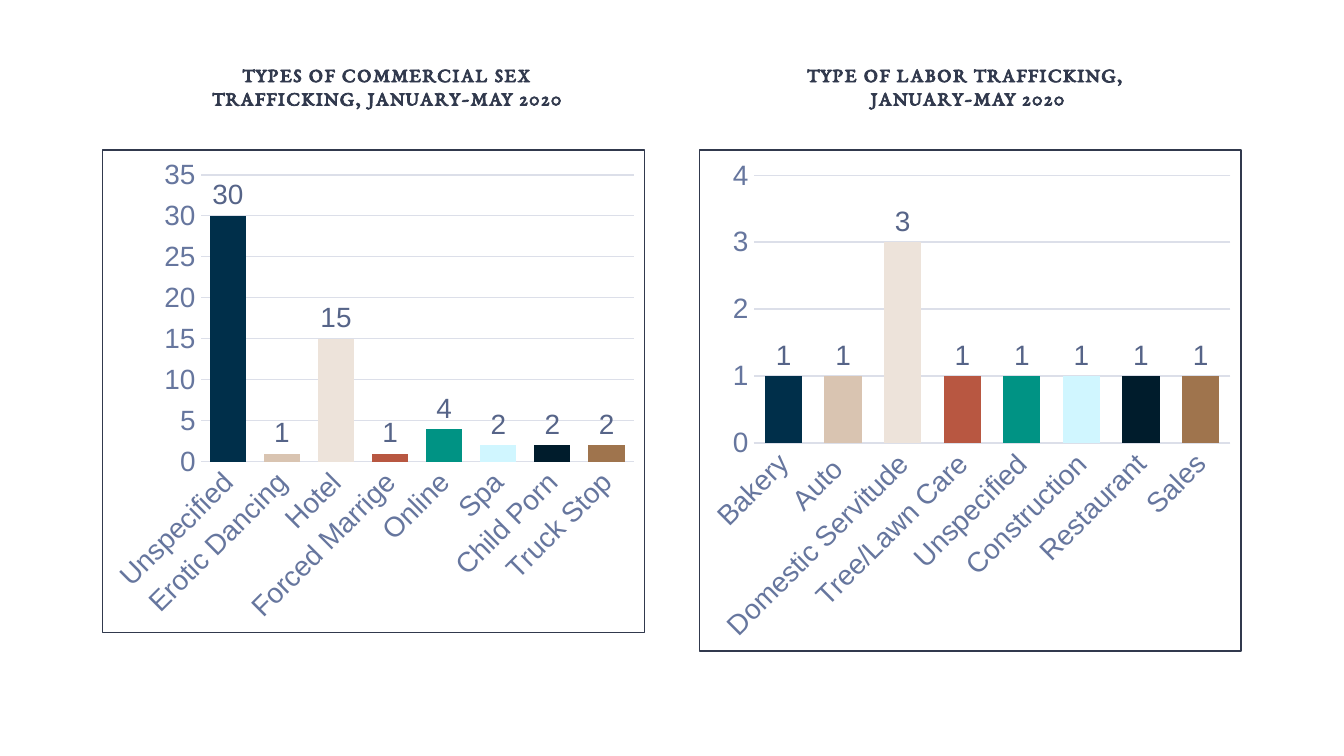
import pptx
import pptx.chart.data
import pptx.dml.color
import pptx.enum.chart
import pptx.enum.text
import pptx.oxml
import pptx.oxml.ns
import pptx.util
from dataclasses import dataclass

Inches = pptx.util.Inches
Pt = pptx.util.Pt
RGB = pptx.dml.color.RGBColor.from_string


@dataclass(frozen=True)
class Theme:
    ink: str = "31394D"
    axis: str = "66769E"
    label: str = "566488"
    grid: str = "DCDFE9"
    bars: tuple = ("002F4A", "D9C4B1", "EDE3DA", "B85741",
                   "009384", "D0F6FF", "001C2C", "9F744D")
    title_font: str = "EB Garamond"
    chart_font: str = "Arial"
    title_size: float = 11
    base_size: float = 10
    chart_size: float = 15
    line: float = 0.75


class Builder:
    def __init__(self, page, theme):
        self.page = page
        self.theme = theme

    def style_font(self, font, name, size, color):
        font.name = name
        font.size = Pt(size)
        font.color.rgb = RGB(color)

    def title(self, lines, left, top, width, height):
        theme = self.theme
        box = self.page.shapes.add_textbox(
            Inches(left), Inches(top), Inches(width), Inches(height))
        frame = box.text_frame
        frame.word_wrap = True
        frame.vertical_anchor = pptx.enum.text.MSO_ANCHOR.BOTTOM
        frame.margin_left = frame.margin_right = Inches(0.1)
        frame.margin_top = frame.margin_bottom = Inches(0.1)
        frame.text = "\n".join(lines)
        for para in frame.paragraphs:
            para.alignment = pptx.enum.text.PP_ALIGN.CENTER
            para.line_spacing = 0.95
            self.style_font(para.font, theme.title_font, theme.title_size, theme.ink)
            para.font.bold = True
            # Letter spacing of 0.75 pt
            para._p.xpath("./a:pPr/a:defRPr")[0].set("spc", "75")

    def column_chart(self, values, left, top, width, height, gap, top_value, step):
        theme = self.theme
        data = pptx.chart.data.CategoryChartData()
        data.categories = list(values)
        data.add_series("Series 1", list(values.values()))
        chart = self.page.shapes.add_chart(
            pptx.enum.chart.XL_CHART_TYPE.COLUMN_CLUSTERED,
            Inches(left), Inches(top), Inches(width), Inches(height), data).chart
        chart.has_title = False
        chart.has_legend = False
        self.style_font(chart.font, theme.chart_font, theme.base_size, theme.ink)
        self.chart_border(chart)

        # Axes
        for axis in (chart.category_axis, chart.value_axis):
            axis.major_tick_mark = pptx.enum.chart.XL_TICK_MARK.NONE
            axis.minor_tick_mark = pptx.enum.chart.XL_TICK_MARK.NONE
            self.style_font(axis.tick_labels.font, theme.chart_font,
                            theme.chart_size, theme.axis)
        chart.element.xpath(".//c:catAx/c:txPr/a:bodyPr")[0].set("rot", "-2700000")
        chart.value_axis.minimum_scale = 0
        chart.value_axis.maximum_scale = top_value
        chart.value_axis.major_unit = step
        chart.value_axis.format.line.fill.background()
        for line in (chart.category_axis.format.line,
                     chart.value_axis.major_gridlines.format.line):
            line.color.rgb = RGB(theme.grid)
            line.width = Pt(theme.line)

        # Columns and their labels
        plot = chart.plots[0]
        plot.gap_width = gap
        plot.overlap = -27
        plot.vary_by_categories = False
        series = plot.series[0]
        for index, color in enumerate(theme.bars):
            fill = series.points[index].format.fill
            fill.solid()
            fill.fore_color.rgb = RGB(color)
        labels = series.data_labels
        labels.show_value = True
        labels.position = pptx.enum.chart.XL_LABEL_POSITION.OUTSIDE_END
        self.style_font(labels.font, theme.chart_font, theme.chart_size, theme.label)

    def chart_border(self, chart):
        theme = self.theme
        border = pptx.oxml.parse_xml(
            f'<c:spPr {pptx.oxml.ns.nsdecls("c", "a")}><a:noFill/>'
            f'<a:ln w="{Pt(theme.line)}"><a:solidFill><a:srgbClr val="{theme.ink}"/>'
            '</a:solidFill></a:ln></c:spPr>')
        chart.element.find(pptx.oxml.ns.qn("c:chart")).addnext(border)


def main():
    # Widescreen page, 16:9
    deck = pptx.Presentation()
    deck.slide_width = Inches(10)
    deck.slide_height = Inches(10 * 9 / 16)
    page = deck.slides.add_slide(deck.slide_layouts[6])
    builder = Builder(page, Theme())

    # Left: commercial sex trafficking
    builder.title(["TYPES OF COMMERCIAL SEX TRAFFICKING, JANUARY-MAY 2020"],
                  1.13, 0.34, 3.5, 0.58)
    sex_trafficking = {
        "Unspecified": 30, "Erotic Dancing": 1, "Hotel": 15, "Forced Marrige": 1,
        "Online": 4, "Spa": 2, "Child Porn": 2, "Truck Stop": 2}
    builder.column_chart(sex_trafficking, 0.76, 1.11, 4.04, 3.6,
                         gap=50, top_value=35, step=5)

    # Right: labor trafficking
    builder.title(["TYPE OF LABOR TRAFFICKING, ", "JANUARY-MAY 2020"],
                  5.18, 0.34, 4.04, 0.58)
    labor_trafficking = {
        "Bakery": 1, "Auto ": 1, "Domestic Servitude": 3, "Tree/Lawn Care": 1,
        "Unspecified": 1, "Construction": 1, "Restaurant": 1, "Sales": 1}
    builder.column_chart(labor_trafficking, 5.2, 1.11, 4.04, 3.74,
                         gap=60, top_value=4, step=1)

    deck.save("out.pptx")


if __name__ == "__main__":
    main()
